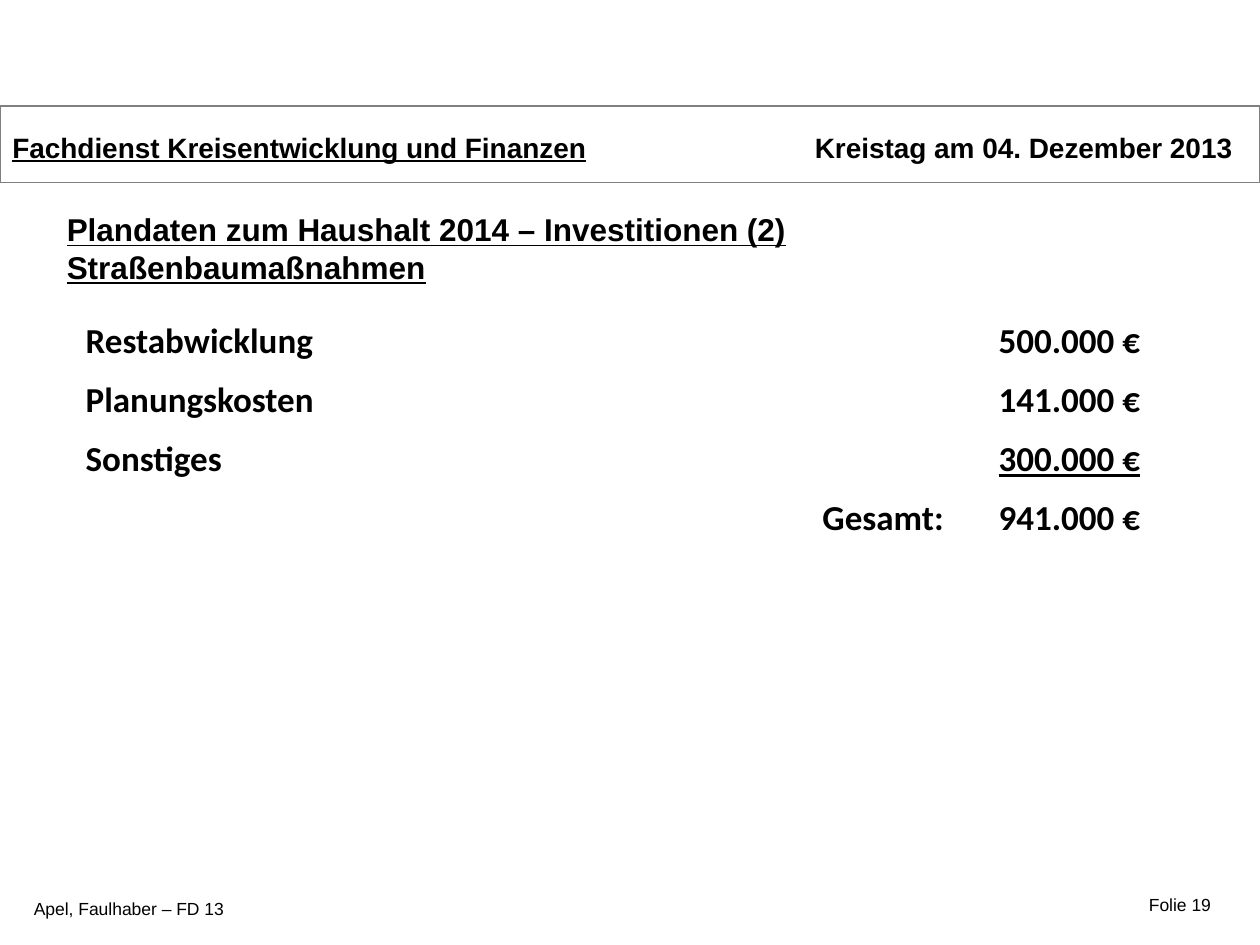
from pptx import Presentation
from pptx.dml.color import RGBColor
from pptx.enum.shapes import MSO_SHAPE
from pptx.enum.text import MSO_ANCHOR, PP_ALIGN
from pptx.util import Inches, Pt

COLORS = {"text": "000000", "border": "808080"}
TITLE = ["Plandaten zum Haushalt 2014 – Investitionen (2)", "Straßenbaumaßnahmen"]
DEPARTMENT = "Fachdienst Kreisentwicklung und Finanzen"
LABELS = [
    ("Kreistag am 04. Dezember 2013", (6.18, 0.99, 3.7, 0.37), {"size": 16, "bold": True, "align": PP_ALIGN.RIGHT}),
    ("Apel, Faulhaber – FD 13", (0.17, 7.08, 1.71, 0.27), {"size": 10}),
    ("Folie 19", (9.02, 7.05, 0.87, 0.27), {"size": 10}),
]
COSTS = [
    ("Restabwicklung", "500.000 €"),
    ("Planungskosten", "141.000 €"),
    ("Sonstiges", "300.000 €"),
    ("Gesamt:", "941.000 €"),
]
COLUMN_WIDTHS = [6.83, 1.56]
ROW_HEIGHT = 0.47


def write(frame, lines, size, font="Arial", bold=False, underline=False, align=PP_ALIGN.LEFT):
    for index, line in enumerate(lines):
        para = frame.paragraphs[0] if index == 0 else frame.add_paragraph()
        para.alignment = align
        span = para.add_run()
        span.text = line
        span.font.name = font
        span.font.size = Pt(size)
        span.font.bold = bold
        span.font.underline = underline
        span.font.color.rgb = RGBColor.from_string(COLORS["text"])


def place(shape, bounds):
    shape.left, shape.top, shape.width, shape.height = map(Inches, bounds)


deck = Presentation()
deck.slide_width, deck.slide_height = Inches(10), Inches(7.5)
page = deck.slides.add_slide(deck.slide_layouts[5])

title = page.shapes.title
place(title, (0.43, 1.62, 5.97, 0.71))
title.text_frame.word_wrap = False
title.text_frame.vertical_anchor = MSO_ANCHOR.TOP
write(title.text_frame, TITLE, size=18, bold=True, underline=True)

header = page.shapes.add_shape(MSO_SHAPE.RECTANGLE, Inches(0), Inches(0.84), Inches(10), Inches(0.61))
header.shadow.inherit = False
header.fill.background()
header.line.color.rgb = RGBColor.from_string(COLORS["border"])
header.line.width = Pt(0.75)
header.text_frame.vertical_anchor = MSO_ANCHOR.MIDDLE
header.text_frame.margin_top = Inches(0.09)
write(header.text_frame, [DEPARTMENT], size=16, bold=True, underline=True)

for label, bounds, style in LABELS:
    box = page.shapes.add_textbox(*map(Inches, bounds))
    box.text_frame.word_wrap = True
    write(box.text_frame, [label], **style)

table = page.shapes.add_table(
    len(COSTS), len(COLUMN_WIDTHS), Inches(0.67), Inches(2.41),
    Inches(sum(COLUMN_WIDTHS)), Inches(ROW_HEIGHT * len(COSTS)),
).table
table.first_row = table.horz_banding = False
for column, width in zip(table.columns, COLUMN_WIDTHS):
    column.width = Inches(width)

last_row = len(COSTS) - 1
for row, entry in enumerate(COSTS):
    for column, content in enumerate(entry):
        cell = table.cell(row, column)
        cell.fill.background()
        cell.vertical_anchor = MSO_ANCHOR.BOTTOM
        cell.margin_left = cell.margin_right = cell.margin_top = Inches(0.01)
        cell.margin_bottom = Inches(0)
        is_amount = column == 1
        write(
            cell.text_frame, [content], size=20, font="Calibri", bold=True,
            underline=is_amount and row == last_row - 1,
            align=PP_ALIGN.RIGHT if is_amount or row == last_row else PP_ALIGN.LEFT,
        )

deck.save("out.pptx")
